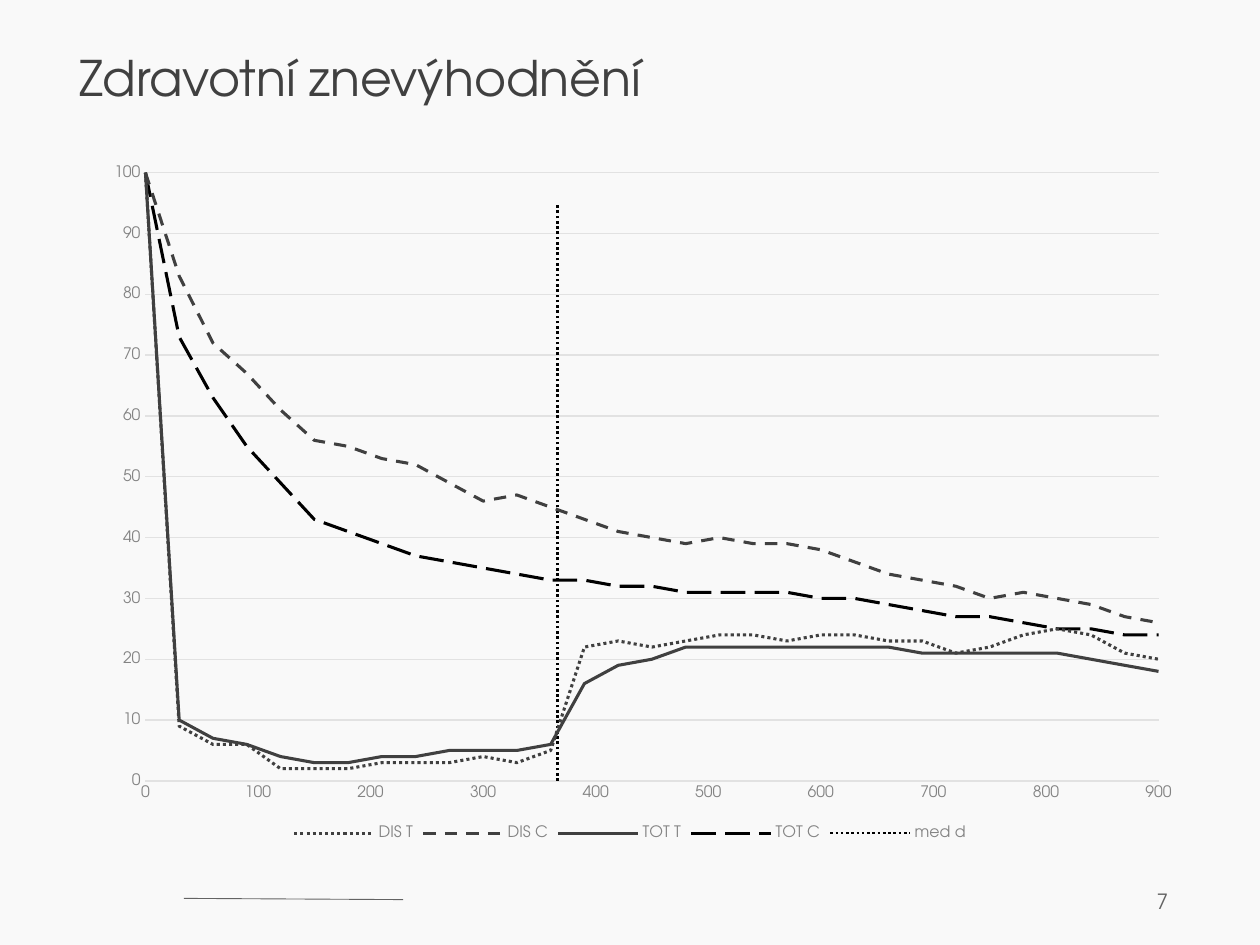
from lxml.etree import SubElement
from pptx import Presentation
from pptx.chart.data import XyChartData
from pptx.dml.color import RGBColor
from pptx.enum.chart import XL_CHART_TYPE, XL_LEGEND_POSITION, XL_MARKER_STYLE, XL_TICK_MARK
from pptx.enum.dml import MSO_LINE
from pptx.enum.shapes import MSO_CONNECTOR
from pptx.enum.text import MSO_ANCHOR, PP_ALIGN
from pptx.oxml import parse_xml
from pptx.oxml.ns import nsdecls, qn
from pptx.util import Inches, Pt


class Theme:
    font = "TeX Gyre Adventor"
    background = RGBColor.from_string("F9F9F9")
    dark = RGBColor.from_string("404040")
    black = RGBColor.from_string("000000")
    footer = RGBColor.from_string("636363")
    label = RGBColor.from_string("838383")
    grid = RGBColor.from_string("E2E2E2")
    title_size, number_size, chart_size, label_size = 28, 12, 10, 9


DAYS = range(0, 901, 30)
MEDIAN_DAY = 366
SERIES = [
    ("DIS T", Theme.dark, 1.75, MSO_LINE.ROUND_DOT,
     [100, 9, 6, 6, 2, 2, 2, 3, 3, 3, 4, 3, 5, 22, 23, 22, 23, 24, 24, 23, 24,
      24, 23, 23, 21, 22, 24, 25, 24, 21, 20]),
    ("DIS C", Theme.dark, 1.75, MSO_LINE.DASH,
     [100, 83, 72, 67, 61, 56, 55, 53, 52, 49, 46, 47, 45, 43, 41, 40, 39, 40,
      39, 39, 38, 36, 34, 33, 32, 30, 31, 30, 29, 27, 26]),
    ("TOT T", Theme.dark, 1.75, MSO_LINE.SOLID,
     [100, 10, 7, 6, 4, 3, 3, 4, 4, 5, 5, 5, 6, 16, 19, 20, 22, 22, 22, 22, 22,
      22, 22, 21, 21, 21, 21, 21, 20, 19, 18]),
    ("TOT C", Theme.black, 1.75, MSO_LINE.LONG_DASH,
     [100, 73, 63, 55, 49, 43, 41, 39, 37, 36, 35, 34, 33, 33, 32, 32, 31, 31,
      31, 31, 30, 30, 29, 28, 27, 27, 26, 25, 25, 24, 24]),
    ("med d", Theme.black, 1.5, MSO_LINE.ROUND_DOT, [0, 95]),
]


class SlideBuilder:
    def __init__(self, prs, theme):
        self.theme = theme
        self.s = prs.slides.add_slide(prs.slide_layouts[6])
        fill = self.s.background.fill
        fill.solid()
        fill.fore_color.rgb = theme.background

    def style_font(self, font, size, color):
        font.name = self.theme.font
        font.size = Pt(size)
        font.color.rgb = color

    def style_line(self, line, color, width):
        line.color.rgb = color
        line.width = Pt(width)

    def text(self, text, box, size, color, inset=0.0, align=PP_ALIGN.LEFT,
             anchor=MSO_ANCHOR.TOP, spacing=None):
        tf = self.s.shapes.add_textbox(*map(Inches, box)).text_frame
        tf.word_wrap = True
        tf.vertical_anchor = anchor
        tf.margin_left = tf.margin_right = Inches(inset)
        tf.margin_top = tf.margin_bottom = Inches(inset / 2)
        tf.text = text
        p = tf.paragraphs[0]
        p.alignment = align
        p.line_spacing = spacing
        self.style_font(p.runs[0].font, size, color)

    def line(self, start, end, color, width):
        ends = map(Inches, (*start, *end))
        cn = self.s.shapes.add_connector(MSO_CONNECTOR.STRAIGHT, *ends)
        self.style_line(cn.line, color, width)
        SubElement(cn._element.spPr, qn("a:effectLst"))

    def axis(self, axis, maximum, step):
        axis.minimum_scale, axis.maximum_scale, axis.major_unit = 0, maximum, step
        axis.major_tick_mark = axis.minor_tick_mark = XL_TICK_MARK.NONE
        axis.has_title = False
        axis.tick_labels.number_format = "General"
        axis.tick_labels.number_format_is_linked = False
        self.style_font(axis.tick_labels.font, self.theme.label_size, self.theme.label)

    def plot_layout(self, chart, x, y, w, h):
        """Fix the inner plot area, as fractions of the chart."""
        area = chart._chartSpace.chart.plotArea
        for old in area.findall(qn("c:layout")):
            area.remove(old)
        sizes = "".join(f'<c:{k} val="{v}"/>' for k, v in zip("xywh", (x, y, w, h)))
        area.insert(0, parse_xml(
            f'<c:layout {nsdecls("c")}><c:manualLayout><c:layoutTarget val="inner"/>'
            f'<c:xMode val="edge"/><c:yMode val="edge"/>{sizes}'
            '</c:manualLayout></c:layout>'))

    def scatter(self, series, box):
        t = self.theme
        data = XyChartData()
        for name, _, _, _, values in series:
            xs = DAYS if len(values) == len(DAYS) else [MEDIAN_DAY] * len(values)
            points = data.add_series(name)
            for x, y in zip(xs, values):
                points.add_data_point(x, y)
        chart = self.s.shapes.add_chart(
            XL_CHART_TYPE.XY_SCATTER_LINES_NO_MARKERS, *map(Inches, box), data).chart
        self.style_font(chart.font, t.chart_size, t.dark)
        chart.has_title = False
        chart.plots[0].vary_by_categories = False

        for ser, (_, color, width, dash, _) in zip(chart.plots[0].series, series):
            ser.smooth = False
            ser.marker.style = XL_MARKER_STYLE.NONE
            self.style_line(ser.format.line, color, width)
            ser.format.line.dash_style = dash

        days, share = chart.category_axis, chart.value_axis
        self.axis(days, 900, 100)
        self.axis(share, 100, 10)
        days.has_major_gridlines = False
        share.has_major_gridlines = True
        self.style_line(days.format.line, t.grid, 0.75)
        self.style_line(share.major_gridlines.format.line, t.grid, 0.75)
        share.format.line.fill.background()

        chart.has_legend = True
        chart.legend.position = XL_LEGEND_POSITION.BOTTOM
        chart.legend.include_in_layout = False
        self.style_font(chart.legend.font, t.label_size, t.label)
        self.plot_layout(chart, 0.06, 0.06, 0.92, 0.85)


def main():
    prs = Presentation()
    prs.slide_width, prs.slide_height = Inches(10), Inches(7.5)
    t = Theme()
    b = SlideBuilder(prs, t)
    b.line((1.46, 7.13), (3.2, 7.14), t.footer, 0.5)
    b.text("7", (7.12, 6.95, 2.25, 0.4), t.number_size, t.footer, inset=0.1,
           align=PP_ALIGN.RIGHT, anchor=MSO_ANCHOR.MIDDLE)
    b.text("Zdravotní znevýhodnění", (0.63, 0.47, 8.74, 0.4), t.title_size, t.dark,
           spacing=0.8)
    b.scatter(SERIES, (0.63, 1.03, 8.74, 5.68))
    prs.save("out.pptx")


if __name__ == "__main__":
    main()
